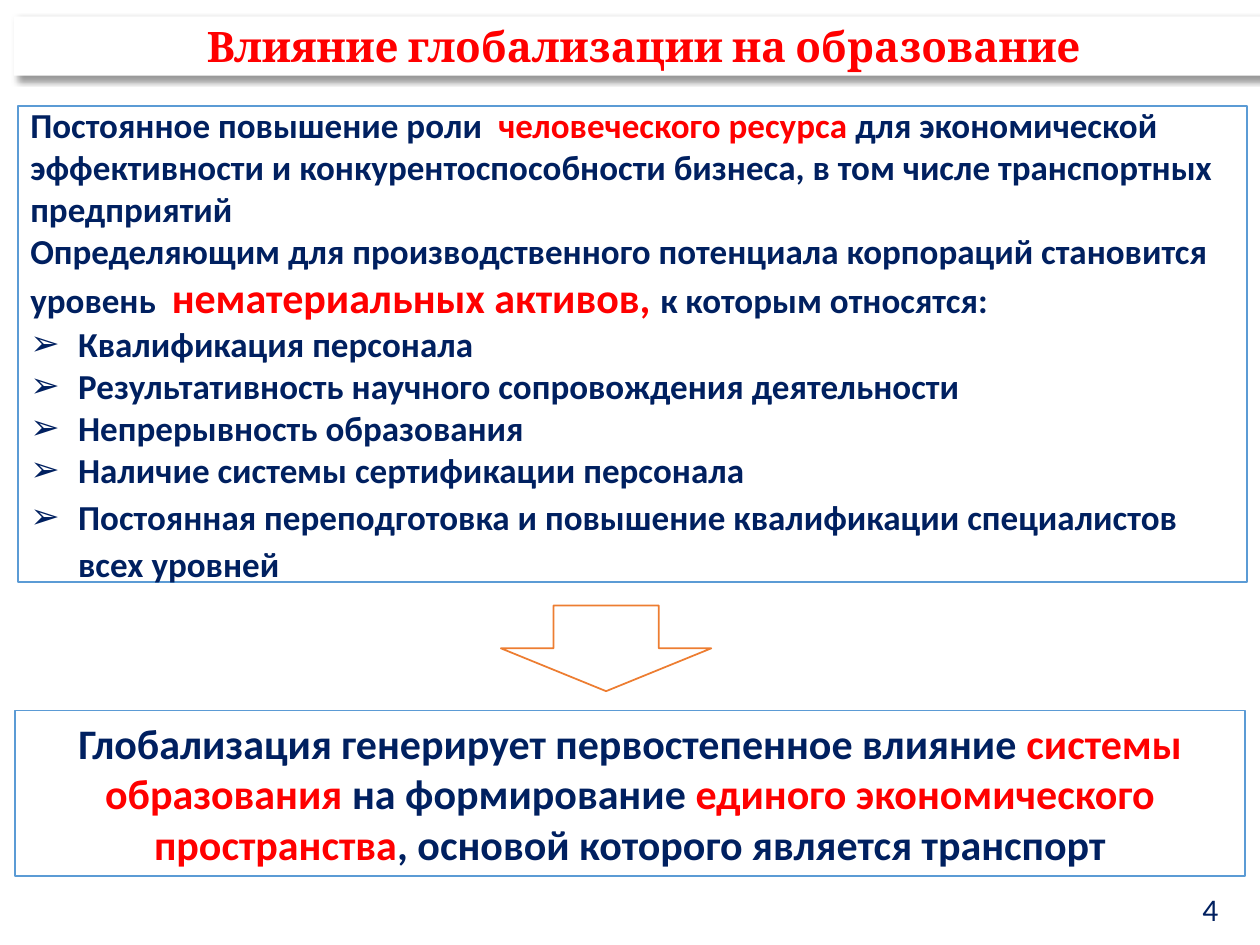
from dataclasses import dataclass

from lxml.etree import SubElement
from pptx import Presentation
from pptx.dml.color import RGBColor
from pptx.enum.shapes import MSO_SHAPE as Preset
from pptx.enum.text import MSO_ANCHOR as Anchor, MSO_AUTO_SIZE as AutoSize, PP_ALIGN as Align
from pptx.oxml.ns import qn
from pptx.util import Inches, Pt

WHITE = RGBColor(0xFF, 0xFF, 0xFF)
RED = RGBColor(0xFF, 0x00, 0x00)
NAVY = RGBColor(0x00, 0x20, 0x60)
BLUE = RGBColor(0x5B, 0x9B, 0xD5)
ORANGE = RGBColor(0xED, 0x7D, 0x31)
WIDTH, HEIGHT = Inches(10), Inches(7.5)
HANG = Inches(0.38)


@dataclass(frozen=True)
class Area:
    """A rectangle in percent of the slide's width and height."""
    left: float
    top: float
    width: float
    height: float

    def lengths(self) -> tuple[int, int, int, int]:
        return (int(WIDTH * self.left / 100), int(HEIGHT * self.top / 100),
                int(WIDTH * self.width / 100), int(HEIGHT * self.height / 100))


@dataclass(frozen=True)
class Span:
    text: str
    color: RGBColor = NAVY
    size: float = 20
    bold: bool = True
    font: str = "Calibri"


@dataclass(frozen=True)
class Para:
    spans: tuple[Span, ...]
    align: Align = Align.LEFT
    bullet: bool = False
    spacing: float | Pt = 1.0


def style_box(box, area: Area, border: RGBColor | None = None) -> None:
    box.left, box.top, box.width, box.height = area.lengths()
    box.shadow.inherit = False
    box.fill.solid()
    box.fill.fore_color.rgb = WHITE
    if border is None:
        box.line.fill.background()
    else:
        box.line.color.rgb = border
        box.line.width = Pt(1)


def write(box, paras: list[Para]) -> None:
    frame = box.text_frame
    frame.word_wrap = True
    frame.auto_size = AutoSize.NONE
    frame.vertical_anchor = Anchor.MIDDLE
    for index, item in enumerate(paras):
        para = frame.add_paragraph() if index else frame.paragraphs[0]
        para.alignment = item.align
        para.line_spacing = item.spacing
        para.space_before = para.space_after = Pt(0)
        # Bullets and hanging indents
        props = para._p.get_or_add_pPr()
        props.set("marL", str(HANG if item.bullet else 0))
        props.set("indent", str(-HANG if item.bullet else 0))
        if item.bullet:
            SubElement(props, qn("a:buChar")).set("char", "➢")
        else:
            SubElement(props, qn("a:buNone"))
        for span in item.spans:
            run = para.add_run()
            run.text = span.text
            run.font.name = span.font
            run.font.size = Pt(span.size)
            run.font.bold = span.bold
            run.font.color.rgb = span.color


def add_drop_shadow(box) -> None:
    effects = box._element.spPr.find(qn("a:effectLst"))
    shadow = SubElement(effects, qn("a:outerShdw"), blurRad=str(Pt(4)), dist=str(Pt(3)),
                        dir=str(45 * 60000), rotWithShape="0")
    color = SubElement(shadow, qn("a:srgbClr"), val="000000")
    SubElement(color, qn("a:alpha"), val="40000")


def main() -> None:
    deck = Presentation()
    deck.slide_width, deck.slide_height = WIDTH, HEIGHT
    page = deck.slides.add_slide(deck.slide_layouts[1])

    # Title bar
    title = page.shapes.title
    style_box(title, Area(1.1, 1.73, 100, 6.27))
    add_drop_shadow(title)
    frame = title.text_frame
    frame.margin_left = frame.margin_right = Inches(0.06)
    frame.margin_top = frame.margin_bottom = Inches(0.03)
    write(title, [Para((Span("Влияние глобализации на образование", RED, 24, font="Cambria"),),
                       Align.CENTER)])

    # Premises and the list of intangible assets
    assets = [
        "Квалификация персонала",
        "Результативность научного сопровождения деятельности",
        "Непрерывность образования",
        "Наличие системы сертификации персонала",
    ]
    last_asset = "Постоянная переподготовка и повышение квалификации специалистов всех уровней"
    body = page.placeholders[1]
    style_box(body, Area(1.4, 11.2, 97.6, 50.4), BLUE)
    write(body, [
        Para((Span("Постоянное повышение роли  "),
              Span("человеческого ресурса ", RED),
              Span("для экономической эффективности и конкурентоспособности бизнеса, "
                   "в том числе транспортных предприятий"))),
        Para((Span("Определяющим для производственного потенциала корпораций "
                   "становится уровень  "),
              Span("нематериальных активов, ", RED, 24),
              Span("к которым относятся:"))),
        *[Para((Span(asset),), bullet=True) for asset in assets],
        Para((Span(last_asset),), bullet=True, spacing=Pt(26.8)),
    ])

    # Conclusion
    conclusion = page.shapes.add_shape(Preset.RECTANGLE, 0, 0, 0, 0)
    style_box(conclusion, Area(1.2, 75.2, 97.6, 17.47), BLUE)
    write(conclusion, [Para((
        Span("Глобализация генерирует первостепенное влияние ", size=24),
        Span("системы образования", RED, 24),
        Span(" на формирование ", size=24),
        Span("единого экономического пространства", RED, 24),
        Span(", основой которого является транспорт", size=24)), Align.CENTER)])

    # Arrow from the premises down to the conclusion
    arrow = page.shapes.add_shape(Preset.RIGHT_ARROW, 0, 0, 0, 0)
    style_box(arrow, Area(44.7, 57.47, 6.8, 22.27), ORANGE)
    arrow.rotation = 90

    # Page number
    number = page.shapes.add_shape(Preset.RECTANGLE, 0, 0, 0, 0)
    style_box(number, Area(93.3, 93.07, 5.5, 6.27))
    write(number, [Para((Span("4", size=18, bold=False),), Align.CENTER)])

    deck.save("out.pptx")


if __name__ == "__main__":
    main()
